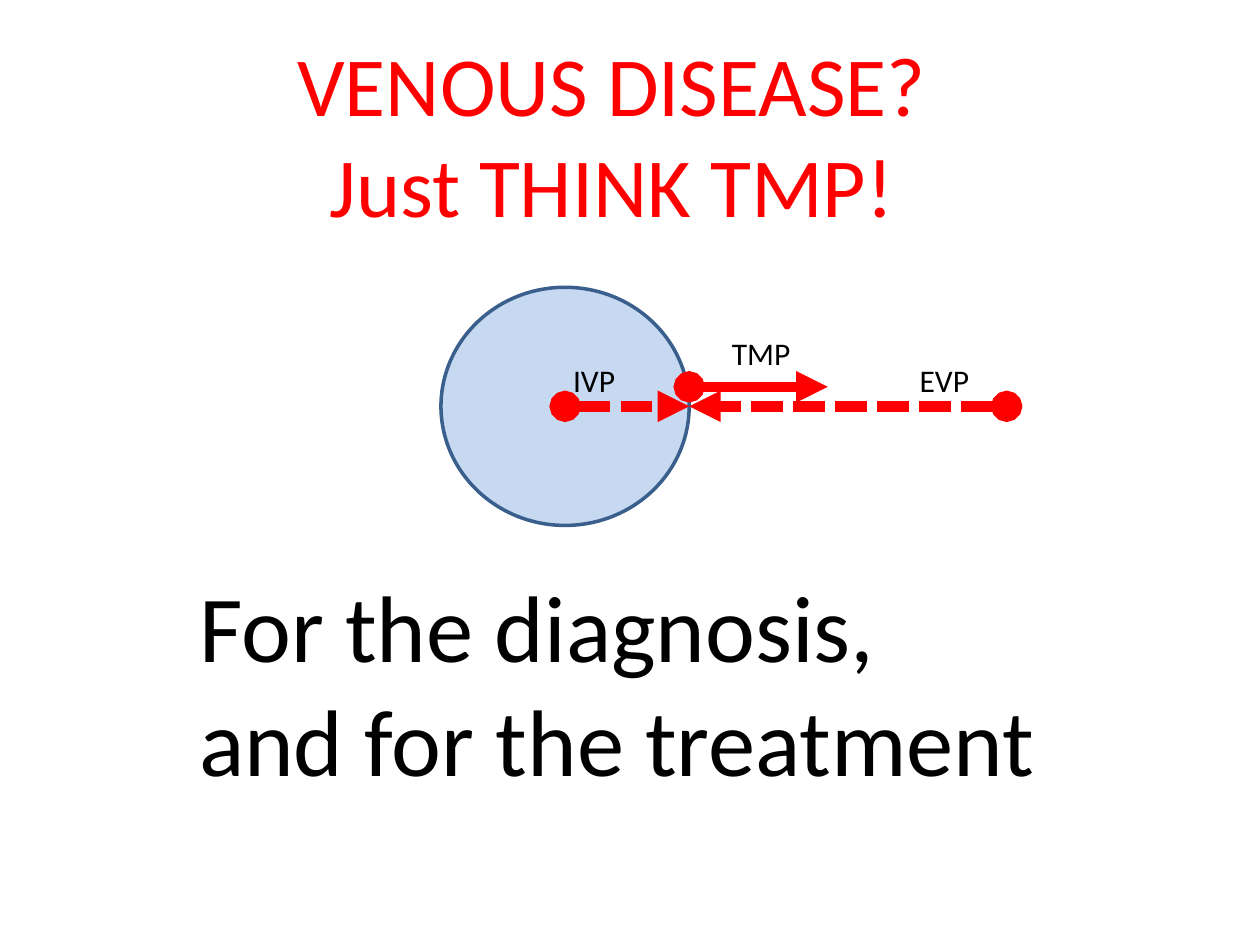
from lxml import etree
from pptx import Presentation
from pptx.dml.color import RGBColor
from pptx.enum import dml, shapes, text
from pptx.oxml import ns
from pptx.util import Inches, Pt

COLORS = {
    "red": "FF0000",
    "black": "000000",
    "vein_fill": "C6D9F1",
    "vein_line": "3A5F8C",
}
FONT = "Calibri"
VEIN_LEFT, VEIN_TOP, VEIN_WIDTH, VEIN_HEIGHT = 3.5, 2.28, 1.97, 1.89
WALL_X = VEIN_LEFT + VEIN_WIDTH
CENTER_X = VEIN_LEFT + VEIN_WIDTH / 2
CENTER_Y = VEIN_TOP + VEIN_HEIGHT / 2


def color(name):
    return RGBColor.from_string(COLORS[name])


def write_text(text_frame, content, size, color_name, alignment):
    text_frame.text = content
    text_frame.word_wrap = True
    text_frame.vertical_anchor = text.MSO_ANCHOR.TOP
    for paragraph in text_frame.paragraphs:
        paragraph.alignment = alignment
        paragraph.space_before = Pt(0)
        for run in paragraph.runs:
            run.font.name = FONT
            run.font.size = Pt(size)
            run.font.color.rgb = color(color_name)


def fill_placeholder(placeholder, box, content, size, color_name, alignment):
    placeholder.left, placeholder.top, placeholder.width, placeholder.height = map(Inches, box)
    write_text(placeholder.text_frame, content, size, color_name, alignment)
    placeholder.text_frame.auto_size = text.MSO_AUTO_SIZE.NONE


def remove_bullets(text_frame):
    for paragraph in text_frame.paragraphs:
        properties = paragraph._p.get_or_add_pPr()
        properties.set("marL", "0")
        properties.set("indent", "0")
        etree.SubElement(properties, ns.qn("a:buNone"))


def add_vein(slide):
    box = map(Inches, (VEIN_LEFT, VEIN_TOP, VEIN_WIDTH, VEIN_HEIGHT))
    vein = slide.shapes.add_shape(shapes.MSO_SHAPE.OVAL, *box)
    vein.shadow.inherit = False
    vein.fill.solid()
    vein.fill.fore_color.rgb = color("vein_fill")
    vein.line.color.rgb = color("vein_line")
    vein.line.width = Pt(2)


def add_pressure_arrow(slide, start_x, end_x, y, dashed):
    arrow = slide.shapes.add_connector(
        shapes.MSO_CONNECTOR.STRAIGHT, Inches(start_x), Inches(y), Inches(end_x), Inches(y)
    )
    arrow.line.color.rgb = color("red")
    arrow.line.width = Pt(6)
    if dashed:
        arrow.line.dash_style = dml.MSO_LINE.SQUARE_DOT
    line = arrow.line._get_or_add_ln()
    for tag, kind in (("a:headEnd", "oval"), ("a:tailEnd", "triangle")):
        etree.SubElement(line, ns.qn(tag), type=kind)
    etree.SubElement(arrow._element.spPr, ns.qn("a:effectLst"))


def add_label(slide, left, top, content):
    label = slide.shapes.add_textbox(Inches(left), Inches(top), Inches(1.18), Inches(0.4))
    write_text(label.text_frame, content, 18, "black", text.PP_ALIGN.LEFT)


def main():
    presentation = Presentation()
    presentation.slide_width = Inches(10)
    presentation.slide_height = Inches(7.5)
    slide = presentation.slides.add_slide(presentation.slide_layouts[1])

    fill_placeholder(
        slide.shapes.title, (0.05, 0.21, 9.61, 1.72),
        "VENOUS DISEASE?\nJust THINK TMP!", 48, "red", text.PP_ALIGN.CENTER,
    )
    body = slide.placeholders[1]
    fill_placeholder(
        body, (1.48, 4.46, 6.91, 3.04),
        "For the diagnosis,\vand for the treatment", 54, "black", text.PP_ALIGN.LEFT,
    )
    remove_bullets(body.text_frame)

    add_vein(slide)
    for start_x, end_x, y, dashed in (
        (7.99, WALL_X, CENTER_Y, True),
        (CENTER_X, WALL_X, CENTER_Y, True),
        (WALL_X, 6.57, 3.07, False),
    ):
        add_pressure_arrow(slide, start_x, end_x, y, dashed)
    for left, top, content in ((4.45, 2.82, "IVP"), (7.2, 2.82, "EVP"), (5.71, 2.6, "TMP")):
        add_label(slide, left, top, content)

    presentation.save("out.pptx")


if __name__ == "__main__":
    main()
